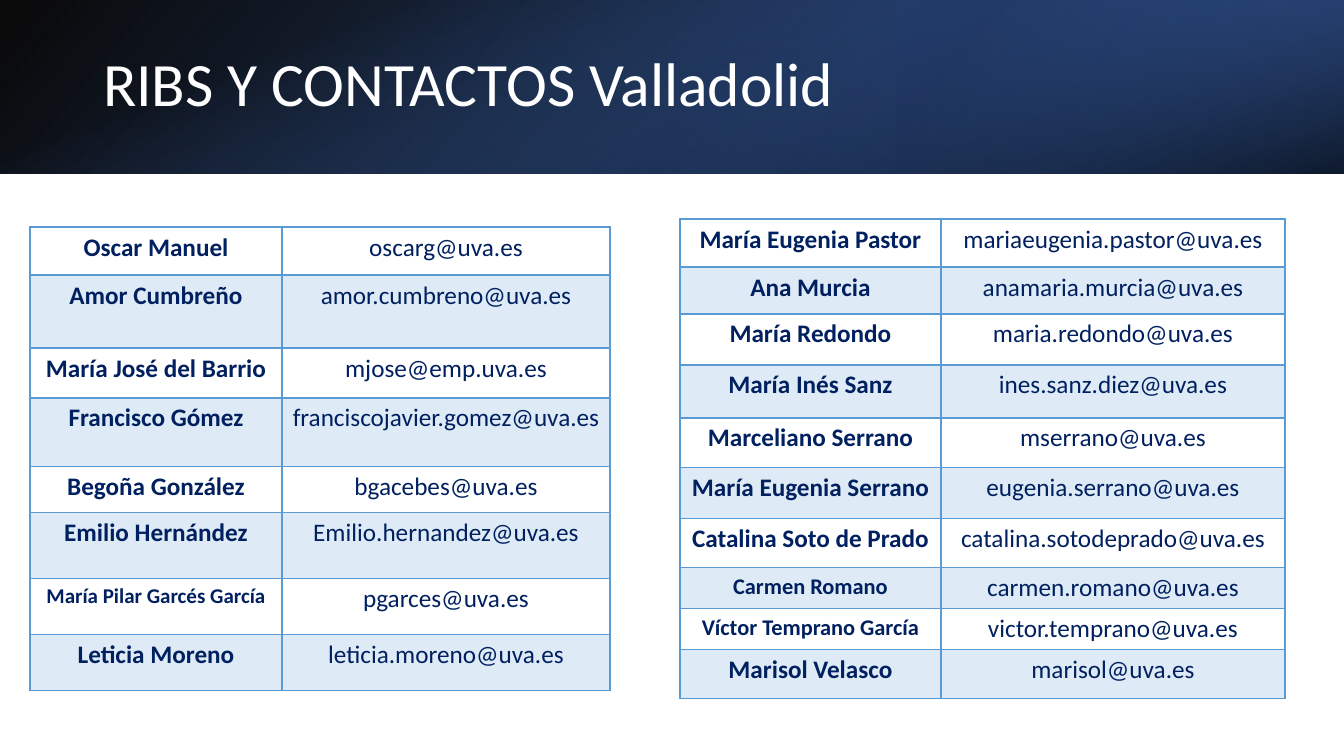
import pptx
import pptx.util
import pptx.oxml
import pptx.oxml.ns
import pptx.dml.color
import pptx.enum.shapes
import pptx.enum.text

PX = 12192000 / 1344
COLORS = {
    "black": "000000", "deep": "2F5597", "navy": "203864", "blue": "4472C4",
    "grid": "5B9BD5", "ink": "002060", "white": "FFFFFF",
}
FONT = "Calibri"
TITLE = "RIBS Y CONTACTOS Valladolid"

BANNER = [
    {"box": (0, 0, 1344, 174), "rotation": 0, "flip": True, "angle": 140,
     "stops": [(0, "black", 96), (100, "deep", 100)]},
    {"box": (896, 0, 448, 174), "rotation": 180, "flip": True, "angle": 320,
     "stops": [(19, "navy", 68), (100, "blue", 79)]},
    {"box": (585, -585, 174, 1344), "rotation": 90, "flip": False, "angle": 340,
     "stops": [(23, "blue", 0), (99, "black", 74)]},
]

DIRECTORIES = [
    {"origin": (680, 219), "columns": (261, 344), "contacts": [
        (48, "María Eugenia Pastor", 18, "mariaeugenia.pastor@uva.es"),
        (47, "Ana Murcia", 18, "anamaria.murcia@uva.es"),
        (51, "María Redondo", 18, "maria.redondo@uva.es"),
        (53, "María Inés Sanz", 18, "ines.sanz.diez@uva.es"),
        (50, "Marceliano Serrano", 18, "mserrano@uva.es"),
        (51, "María Eugenia Serrano", 18, "eugenia.serrano@uva.es"),
        (49, "Catalina Soto de Prado", 18, "catalina.sotodeprado@uva.es"),
        (41, "Carmen Romano", 16, "carmen.romano@uva.es"),
        (41, "Víctor Temprano García", 16, "victor.temprano@uva.es"),
        (49, "Marisol Velasco", 18, "marisol@uva.es"),
    ]},
    {"origin": (30, 227), "columns": (252, 328), "contacts": [
        (48, "Oscar Manuel", 18, "oscarg@uva.es"),
        (73, "Amor Cumbreño", 18, "amor.cumbreno@uva.es"),
        (50, "María José del Barrio", 18, "mjose@emp.uva.es"),
        (69, "Francisco Gómez", 18, "franciscojavier.gomez@uva.es"),
        (46, "Begoña González", 18, "bgacebes@uva.es"),
        (66, "Emilio Hernández", 18, "Emilio.hernandez@uva.es"),
        (56, "María Pilar Garcés García", 15, "pgarces@uva.es"),
        (56, "Leticia Moreno", 18, "leticia.moreno@uva.es"),
    ]},
]


def px(*lengths):
    return [pptx.util.Emu(round(length * PX)) for length in lengths]


def rgb(name):
    return pptx.dml.color.RGBColor.from_string(COLORS[name])


def xml(tag, attributes="", inner=""):
    return f"<a:{tag} {attributes}>{inner}</a:{tag}>"


def parse(markup):
    namespace = pptx.oxml.ns.nsdecls("a")
    return pptx.oxml.parse_xml(markup.replace(" ", f" {namespace} ", 1))


def color_xml(name, opacity=100):
    alpha = xml("alpha", f'val="{opacity * 1000}"')
    return xml("srgbClr", f'val="{COLORS[name]}"', alpha)


def style(paragraph, size, color, bold=False):
    paragraph.font.name = FONT
    paragraph.font.size = pptx.util.Pt(size)
    paragraph.font.bold = bold
    paragraph.font.color.rgb = rgb(color)


def add_banner_layer(slide, layer):
    panel = slide.shapes.add_shape(
        pptx.enum.shapes.MSO_SHAPE.RECTANGLE, *px(*layer["box"]))
    panel.rotation = layer["rotation"]
    panel.shadow.inherit = False
    panel.line.fill.background()
    properties = panel._element.spPr
    if layer["flip"]:
        properties.xfrm.set("flipH", "1")
    stops = "".join(xml("gs", f'pos="{position * 1000}"', color_xml(name, opacity))
                    for position, name, opacity in layer["stops"])
    direction = xml("lin", f'ang="{layer["angle"] * 60000}" scaled="0"')
    gradient = xml("gradFill", 'rotWithShape="1"', xml("gsLst", "", stops) + direction)
    properties.insert_element_before(
        parse(gradient), "a:ln", "a:effectLst")


def format_cell(cell, text, size, bold, row):
    cell.text = text
    paragraph = cell.text_frame.paragraphs[0]
    paragraph.alignment = pptx.enum.text.PP_ALIGN.CENTER
    style(paragraph, size, "ink", bold)
    properties = cell._tc.get_or_add_tcPr()
    for side in ("lnL", "lnR", "lnT", "lnB"):
        points = 2 if row == 0 and side == "lnB" else 1
        line = xml(side, f'w="{points * 12700}"', xml("solidFill", "", color_xml("grid")))
        properties.append(parse(line))
    if row % 2:
        properties.append(parse(xml("solidFill", "", color_xml("grid", 20))))
    else:
        cell.fill.background()


def add_directory(slide, directory):
    contacts, columns = directory["contacts"], directory["columns"]
    size = (sum(columns), sum(contact[0] for contact in contacts))
    table = slide.shapes.add_table(
        len(contacts), len(columns), *px(*directory["origin"], *size)).table
    table.first_row = False
    table.horz_banding = False
    for column, width in zip(table.columns, px(*columns)):
        column.width = width
    for row, (height, name, name_size, email) in enumerate(contacts):
        table.rows[row].height = px(height)[0]
        format_cell(table.cell(row, 0), name, name_size, True, row)
        format_cell(table.cell(row, 1), email, 18, False, row)


def set_title(slide):
    title = slide.shapes.title
    title.left, title.top, title.width, title.height = px(93, 40, 1159, 94)
    frame = title.text_frame
    frame.text = TITLE
    frame.word_wrap = True
    frame.auto_size = pptx.enum.text.MSO_AUTO_SIZE.NONE
    frame.vertical_anchor = pptx.enum.text.MSO_ANCHOR.MIDDLE
    paragraph = frame.paragraphs[0]
    paragraph.alignment = pptx.enum.text.PP_ALIGN.LEFT
    paragraph.line_spacing = 0.9
    style(paragraph, 44, "white")
    slide.shapes._spTree.append(title._element)


def main():
    deck = pptx.Presentation()
    deck.slide_width, deck.slide_height = px(1344, 756)
    slide = deck.slides.add_slide(deck.slide_layouts[5])
    for layer in BANNER:
        add_banner_layer(slide, layer)
    for directory in DIRECTORIES:
        add_directory(slide, directory)
    set_title(slide)
    deck.save("out.pptx")


if __name__ == "__main__":
    main()
